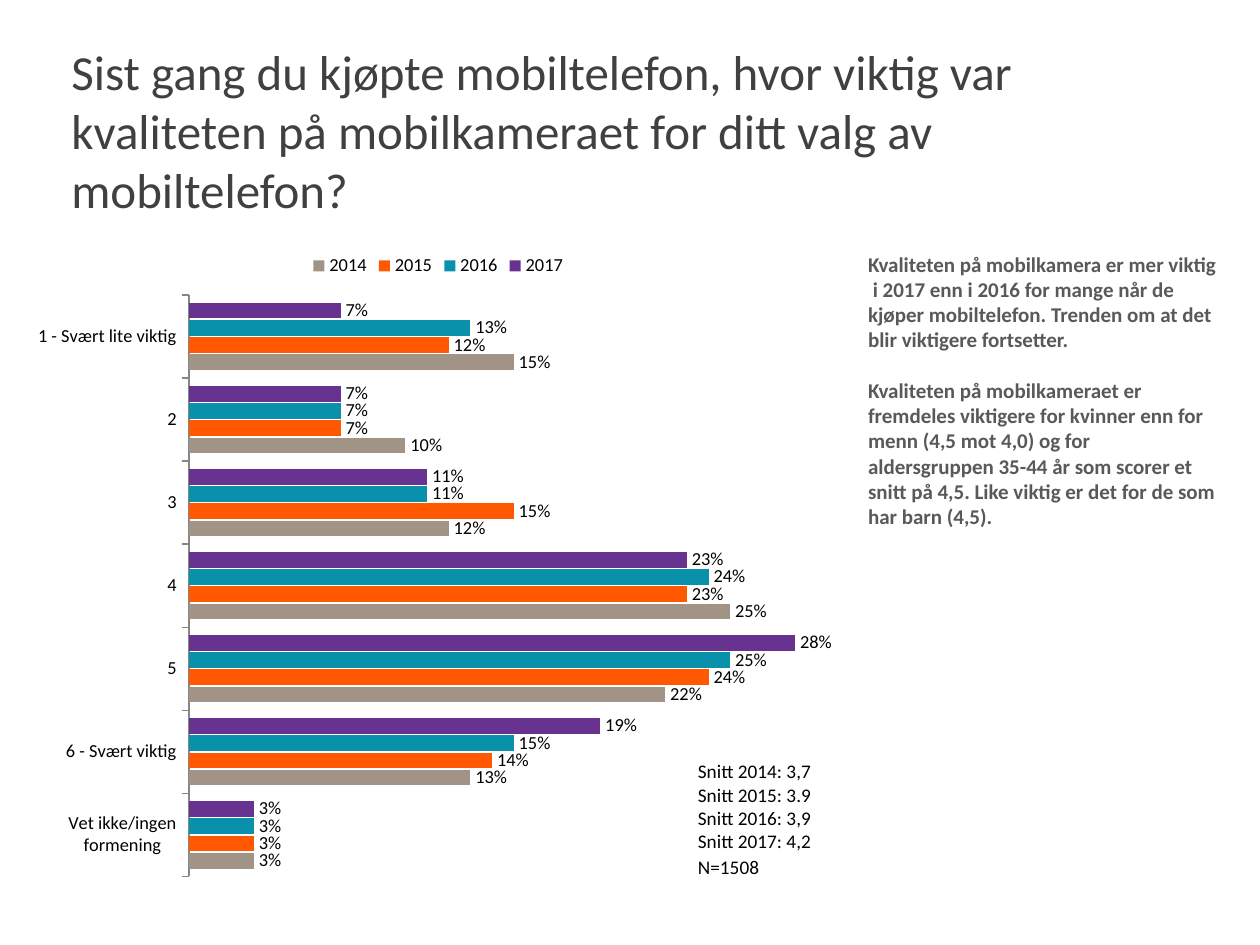
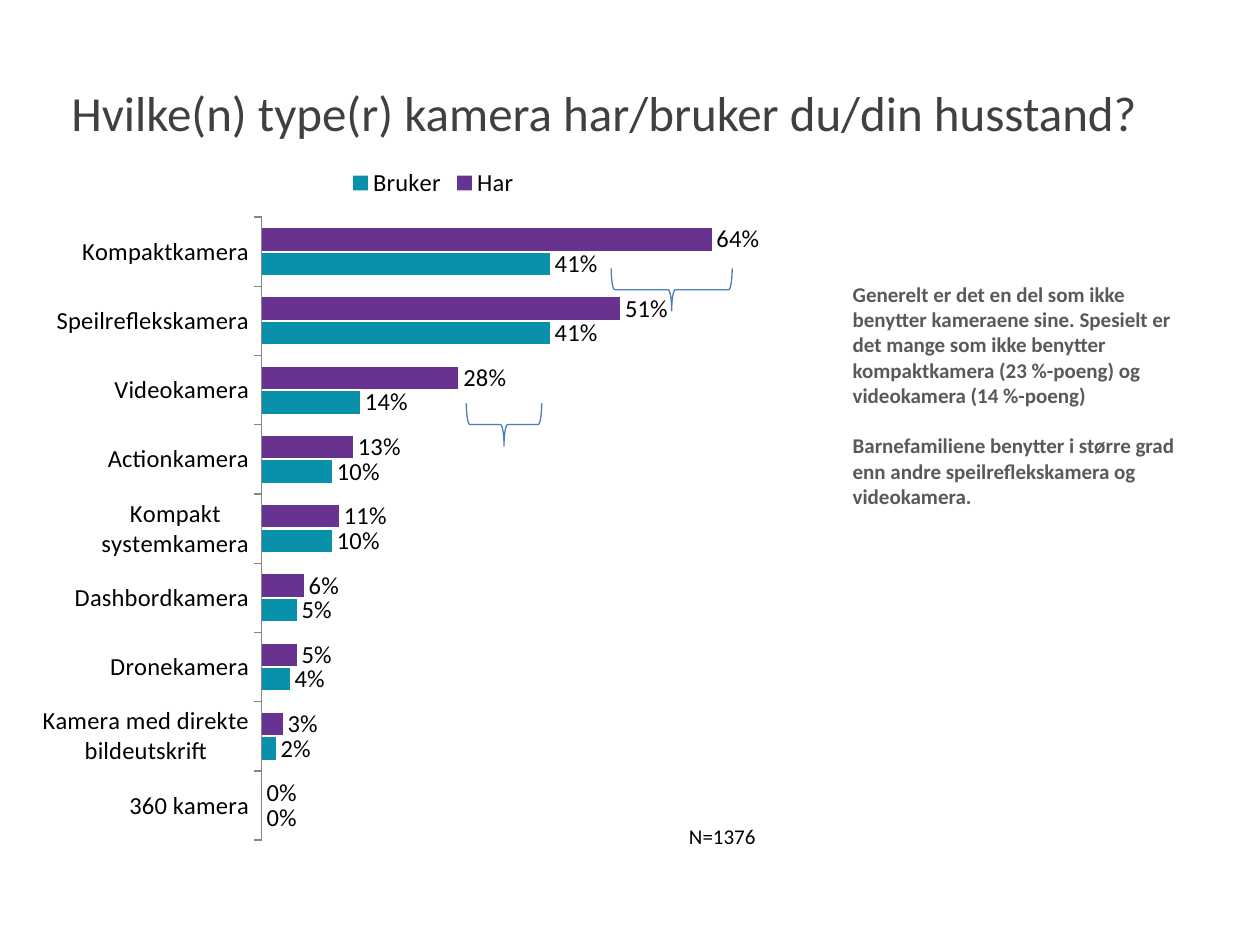
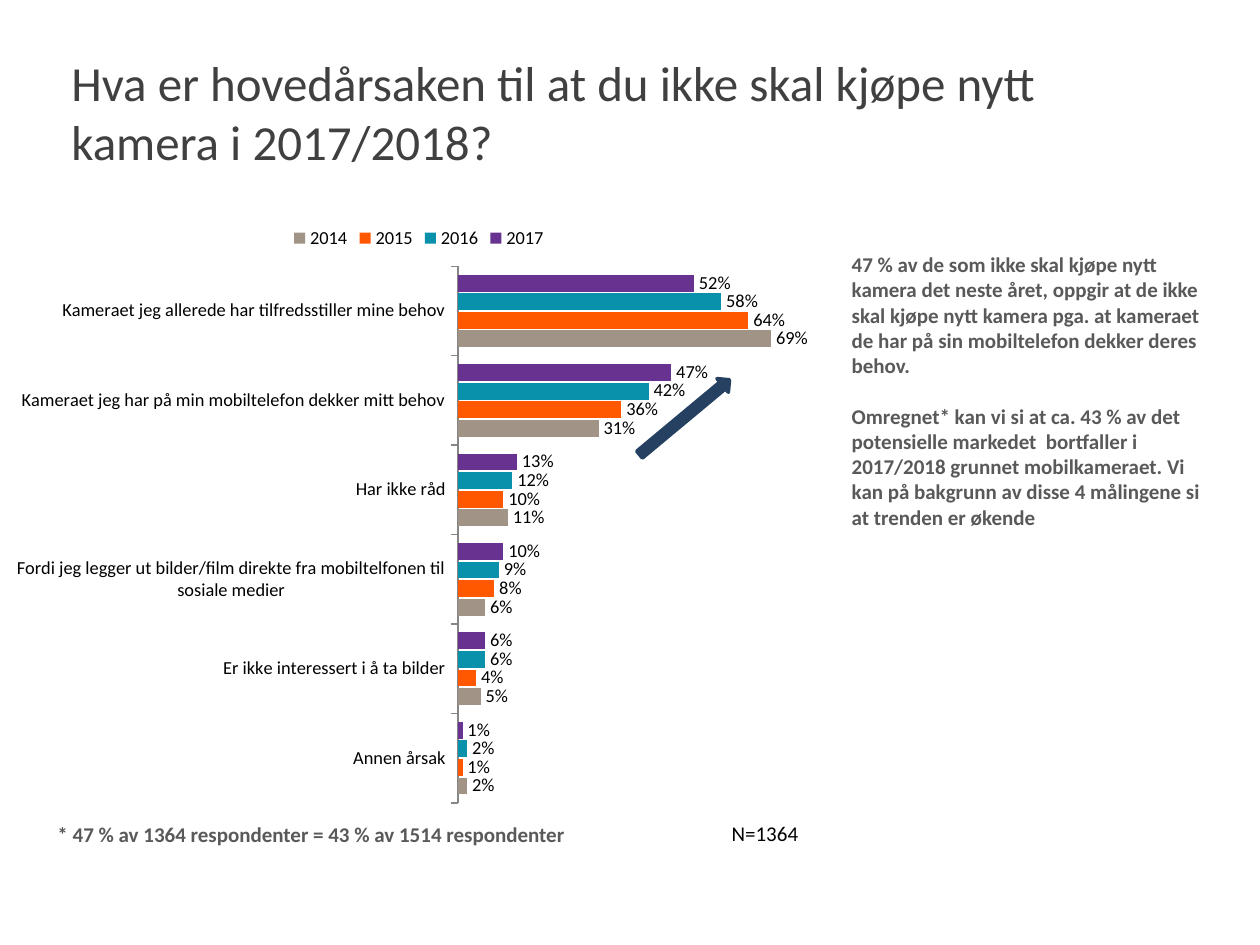
import pptx
import pptx.chart.data
import pptx.dml.color
import pptx.enum.chart
import pptx.enum.shapes
import pptx.enum.text
import pptx.util
from pptx.util import Cm, Pt

RGBColor = pptx.dml.color.RGBColor

# Shared look
FONT = "Calibri"
BLACK = RGBColor(0x00, 0x00, 0x00)
WHITE = RGBColor(0xFF, 0xFF, 0xFF)
TITLE_GREY = RGBColor(0x40, 0x40, 0x40)
NOTE_GREY = RGBColor(0x59, 0x59, 0x59)
AXIS_GREY = RGBColor(0x86, 0x86, 0x86)
PURPLE = RGBColor(0x68, 0x33, 0x90)
TEAL = RGBColor(0x09, 0x91, 0xAB)
ORANGE = RGBColor(0xFF, 0x58, 0x00)
TAUPE = RGBColor(0xA1, 0x94, 0x87)
BRACE_BLUE = RGBColor(0x4B, 0x7E, 0xBC)
ARROW_NAVY = RGBColor(0x25, 0x40, 0x61)
YEAR_COLORS = {"2017": PURPLE, "2016": TEAL, "2015": ORANGE, "2014": TAUPE}
USE_COLORS = {"Har": PURPLE, "Bruker": TEAL}


def add_text(slide, box, paragraphs, size, color=BLACK, bold=False,
             wrap=True, gap=0):
    """Add a text box; gap is the space in points between paragraphs."""
    shape = slide.shapes.add_textbox(*map(Cm, box))
    text_frame = shape.text_frame
    text_frame.word_wrap = wrap
    for index, text in enumerate(paragraphs):
        paragraph = text_frame.paragraphs[0] if index == 0 else text_frame.add_paragraph()
        paragraph.text = text
        if index and gap:
            paragraph.space_before = Pt(gap)
        for run in paragraph.runs:
            run.font.name = FONT
            run.font.size = Pt(size)
            run.font.bold = bold
            run.font.color.rgb = color
    return shape


def add_title(slide, text, top=1.52):
    shape = add_text(slide, (1.19, top, 22.94, 1.47), [text], 28, TITLE_GREY)
    shape.text_frame.vertical_anchor = pptx.enum.text.MSO_ANCHOR.MIDDLE


def add_comment(slide, box, paragraphs):
    return add_text(slide, box, paragraphs, 12, NOTE_GREY, bold=True, gap=14.6)


def add_sample_size(slide, left, top, count, size=12):
    add_text(slide, (left, top, 1.88, 0.76), [f"N={count}"], size, wrap=False)


def add_bar_chart(slide, box, categories, percentages, colors, size, maximum):
    """Add a clustered bar chart with the first category and series on top."""
    data = pptx.chart.data.CategoryChartData(number_format="0%")
    data.categories = categories
    for name, values in percentages.items():
        data.add_series(name, [value / 100 for value in values])
    chart = slide.shapes.add_chart(
        pptx.enum.chart.XL_CHART_TYPE.BAR_CLUSTERED, *map(Cm, box), data).chart
    chart.has_title = False
    chart.font.name = FONT
    chart.font.size = Pt(size)
    chart.font.color.rgb = BLACK

    chart.has_legend = True
    chart.legend.position = pptx.enum.chart.XL_LEGEND_POSITION.TOP
    chart.legend.include_in_layout = False

    category_axis = chart.category_axis
    category_axis.reverse_order = True
    category_axis.has_major_gridlines = False
    category_axis.major_tick_mark = pptx.enum.chart.XL_TICK_MARK.OUTSIDE
    category_axis.format.line.color.rgb = AXIS_GREY
    category_axis.format.line.width = Pt(0.75)
    value_axis = chart.value_axis
    value_axis.visible = False
    value_axis.has_major_gridlines = False
    value_axis.minimum_scale = 0
    value_axis.maximum_scale = maximum

    plot = chart.plots[0]
    plot.gap_width = 100
    plot.overlap = -10
    plot.vary_by_categories = False
    for series in plot.series:
        series.format.fill.solid()
        series.format.fill.fore_color.rgb = colors[series.name]
        labels = series.data_labels
        labels.show_value = True
        labels.number_format = "0%"
        labels.number_format_is_linked = False
        labels.position = pptx.enum.chart.XL_LABEL_POSITION.OUTSIDE_END


def add_marker(slide, kind, box, rotation, color, width, filled=False):
    """Add a rotated brace or arrow that points out part of a chart."""
    shape = slide.shapes.add_shape(kind, *map(Cm, box))
    shape.shadow.inherit = False
    shape.rotation = rotation
    shape.line.color.rgb = color
    shape.line.width = Pt(width)
    if filled:
        shape.fill.solid()
        shape.fill.fore_color.rgb = color
    else:
        shape.fill.background()


def build_camera_quality(slide):
    add_bar_chart(
        slide, (0.43, 4.85, 16.81, 13.08),
        ["1 - Svært lite viktig", "2", "3", "4", "5", "6 - Svært viktig",
         "Vet ikke/ingen formening"],
        {"2017": [7, 7, 11, 23, 28, 19, 3],
         "2016": [13, 7, 11, 24, 25, 15, 3],
         "2015": [12, 7, 15, 23, 24, 14, 3],
         "2014": [15, 10, 12, 25, 22, 13, 3]},
        YEAR_COLORS, 10.5, 0.3)
    add_title(slide, "Sist gang du kjøpte mobiltelefon, hvor viktig var kvaliteten på "
                     "mobilkameraet for ditt valg av mobiltelefon?", top=1.88)
    add_comment(slide, (17.25, 4.94, 7.59, 10.53), [
        "Kvaliteten på mobilkamera er mer viktig  i 2017 enn i 2016 for mange når de "
        "kjøper mobiltelefon. Trenden om at det blir viktigere fortsetter.",
        "Kvaliteten på mobilkameraet er fremdeles viktigere for kvinner enn for menn "
        "(4,5 mot 4,0) og for aldersgruppen 35-44 år som scorer et snitt på 4,5. "
        "Like viktig er det for de som har barn (4,5)."])
    # Average score per year
    add_text(slide, (13.82, 15.19, 3.2, 1.9),
             ["Snitt 2014: 3,7\nSnitt 2015: 3.9", "Snitt 2016: 3,9\nSnitt 2017: 4,2"], 11)
    add_sample_size(slide, 13.82, 17.12, 1508, size=11)


def build_camera_types(slide):
    add_bar_chart(
        slide, (0.53, 3.1, 16.41, 14.12),
        ["Kompaktkamera", "Speilreflekskamera", "Videokamera", "Actionkamera",
         "Kompakt systemkamera", "Dashbordkamera", "Dronekamera",
         "Kamera med direkte bildeutskrift", "360 kamera"],
        {"Har": [64, 51, 28, 13, 11, 6, 5, 3, 0],
         "Bruker": [41, 41, 14, 10, 10, 5, 4, 2, 0]},
        USE_COLORS, 14, 0.8)
    add_title(slide, "Hvilke(n) type(r) kamera har/bruker du/din husstand?")
    add_comment(slide, (16.94, 5.55, 7.19, 5.9), [
        "Generelt er det en del som ikke benytter kameraene sine. Spesielt er det mange "
        "som ikke benytter kompaktkamera (23 %-poeng) og videokamera (14 %-poeng)",
        "Barnefamiliene benytter i større grad enn andre speilreflekskamera og "
        "videokamera."])
    add_sample_size(slide, 13.64, 16.48, 1376)
    # Braces marking the gap between owning and using
    for box in ((13.11, 4.62, 0.86, 2.44), (9.73, 7.8, 0.86, 1.52)):
        add_marker(slide, pptx.enum.shapes.MSO_SHAPE.RIGHT_BRACE, box, 90, BRACE_BLUE, 0.75)


def build_reasons_not_to_buy(slide):
    add_bar_chart(
        slide, (0, 4.29, 16.89, 12.14),
        ["Kameraet jeg allerede har tilfredsstiller mine behov",
         "Kameraet jeg har på min mobiltelefon dekker mitt behov",
         "Har ikke råd",
         "Fordi jeg legger ut bilder/film direkte fra mobiltelfonen til sosiale medier",
         "Er ikke interessert i å ta bilder", "Annen årsak"],
        {"2017": [52, 47, 13, 10, 6, 1],
         "2016": [58, 42, 12, 9, 6, 2],
         "2015": [64, 36, 10, 8, 4, 1],
         "2014": [69, 31, 11, 6, 5, 2]},
        YEAR_COLORS, 10.5, 0.8)
    add_title(slide, "Hva er hovedårsaken til at du ikke skal kjøpe nytt kamera i 2017/2018?")
    comment = add_comment(slide, (16.92, 4.95, 7.59, 6.93), [
        "47 % av de som ikke skal kjøpe nytt kamera det neste året, oppgir at de ikke "
        "skal kjøpe nytt kamera pga. at kameraet de har på sin mobiltelefon dekker "
        "deres behov.",
        "Omregnet* kan vi si at ca. 43 % av det potensielle markedet  bortfaller i "
        "2017/2018 grunnet mobilkameraet. Vi kan på bakgrunn av disse 4 målingene si "
        "at trenden er økende"])
    comment.fill.solid()
    comment.fill.fore_color.rgb = WHITE
    add_sample_size(slide, 14.5, 16.41, 1364)
    add_comment(slide, (0.91, 16.43, 17.37, 0.76),
                ["* 47 % av 1364 respondenter = 43 % av 1514 respondenter"])
    # Arrow showing the rising trend
    add_marker(slide, pptx.enum.shapes.MSO_SHAPE.RIGHT_ARROW, (12.62, 8.23, 2.36, 0.36),
               320.2, ARROW_NAVY, 2, filled=True)


def main():
    presentation = pptx.Presentation()
    presentation.slide_width = Cm(25.4)
    presentation.slide_height = Cm(19.05)
    blank_layout = presentation.slide_layouts[6]
    for build in (build_camera_quality, build_camera_types, build_reasons_not_to_buy):
        build(presentation.slides.add_slide(blank_layout))
    presentation.save("out.pptx")


if __name__ == "__main__":
    main()
